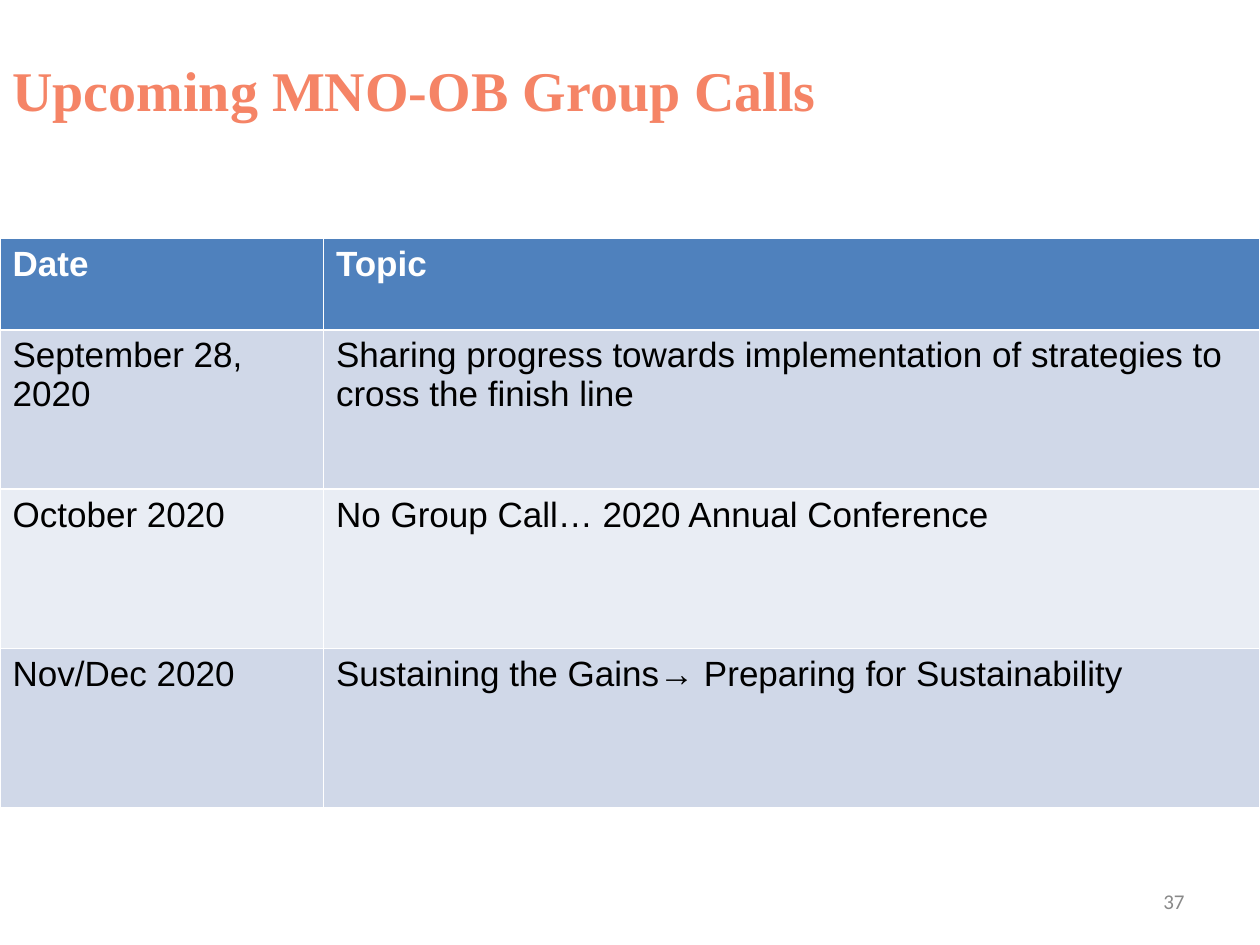
"""Build the slide listing upcoming group calls by date and topic."""
from dataclasses import dataclass

import pptx
import pptx.dml.color
import pptx.enum.text
import pptx.util
from pptx.util import Cm


@dataclass(frozen=True)
class Theme:
    title: str = "F58466"
    header: str = "4F81BD"
    header_text: str = "FFFFFF"
    bands: tuple = ("D0D8E8", "E9EDF4")
    body_text: str = "000000"
    number: str = "898989"
    title_size: int = 32
    table_size: int = 20
    number_size: int = 12


theme = Theme()


def add_span(para, text, font, size, color, bold=False):
    """Add one styled run to a paragraph."""
    span = para.add_run()
    span.text = text
    span.font.name = font
    span.font.size = pptx.util.Pt(size)
    span.font.bold = bold
    span.font.color.rgb = pptx.dml.color.RGBColor.from_string(color)


def add_box(page, left, top, width, height):
    """Add a wrapping, vertically centred text box and return its paragraph."""
    box = page.shapes.add_textbox(Cm(left), Cm(top), Cm(width), Cm(height))
    box.text_frame.word_wrap = True
    box.text_frame.vertical_anchor = pptx.enum.text.MSO_ANCHOR.MIDDLE
    return box.text_frame.paragraphs[0]


deck = pptx.Presentation()
deck.slide_width, deck.slide_height = Cm(25.4), Cm(19.05)
page = deck.slides.add_slide(deck.slide_layouts[6])

title = add_box(page, 0, 0.2, 20.12, 3.18)
add_span(title, "Upcoming MNO-OB Group Calls", "Times New Roman", theme.title_size, theme.title, True)

calls = [
    ("Date", "Topic"),
    ("September 28, 2020", "Sharing progress towards implementation of strategies to cross the finish line"),
    ("October 2020", "No Group Call… 2020 Annual Conference"),
    ("Nov/Dec 2020", "Sustaining the Gains→ Preparing for Sustainability"),
]
table = page.shapes.add_table(len(calls), 2, Cm(0), Cm(4.8), Cm(25.4), Cm(11.48)).table
for column, width in zip(table.columns, (6.52, 18.88)):
    column.width = Cm(width)

for index, call in enumerate(calls):
    is_header = index == 0
    table.rows[index].height = Cm(1.85 if is_header else 3.21)
    fill = theme.header if is_header else theme.bands[(index - 1) % 2]
    color = theme.header_text if is_header else theme.body_text
    for cell, text in zip(table.rows[index].cells, call):
        cell.fill.solid()
        cell.fill.fore_color.rgb = pptx.dml.color.RGBColor.from_string(fill)
        add_span(cell.text_frame.paragraphs[0], text, "Arial", theme.table_size, color, is_header)

number = add_box(page, 18.2, 17.66, 5.93, 1.01)
number.alignment = pptx.enum.text.PP_ALIGN.RIGHT
add_span(number, "37", "Calibri", theme.number_size, theme.number)

deck.save("out.pptx")
